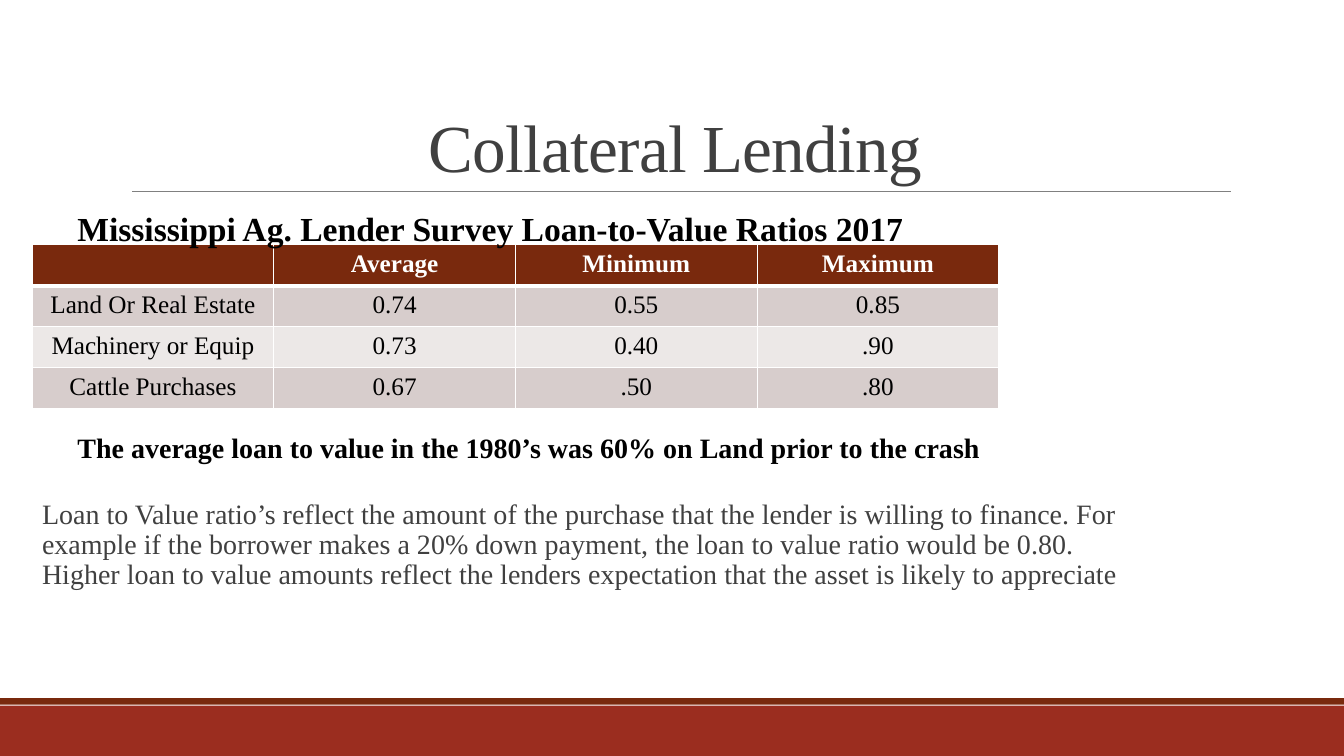
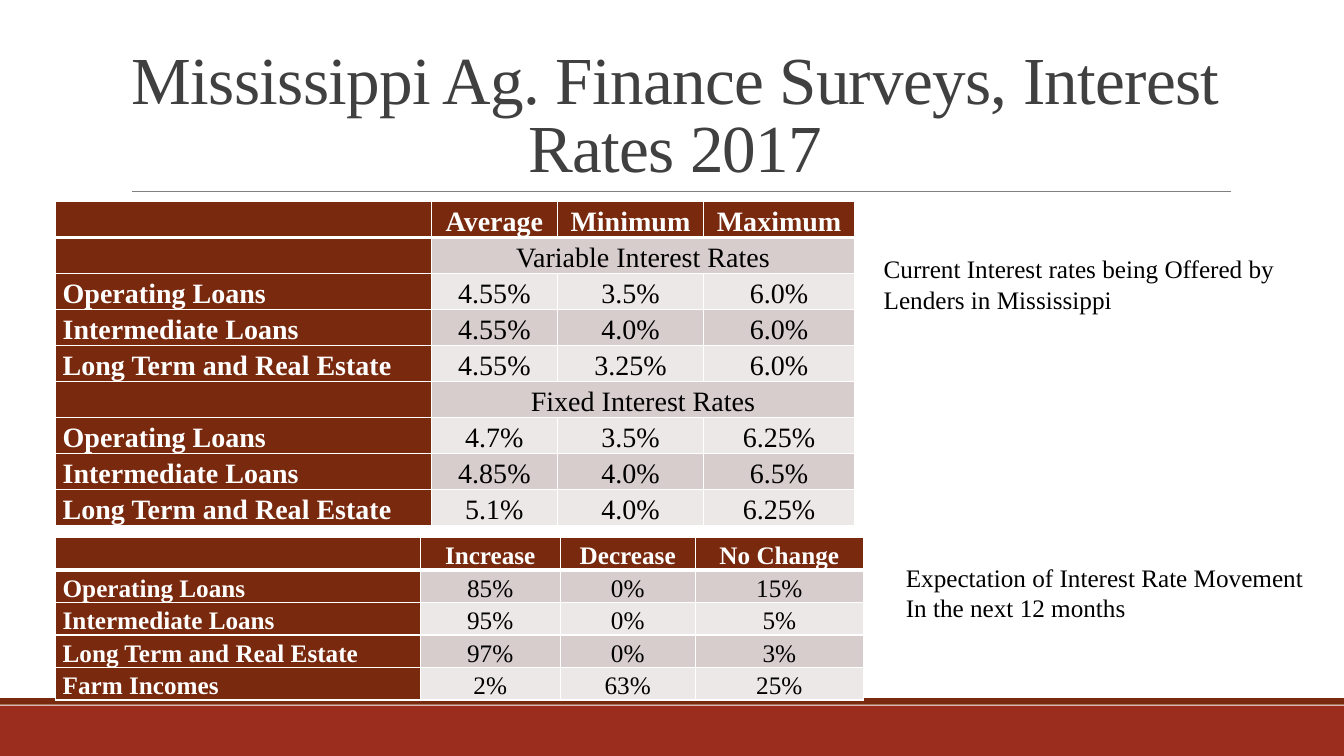
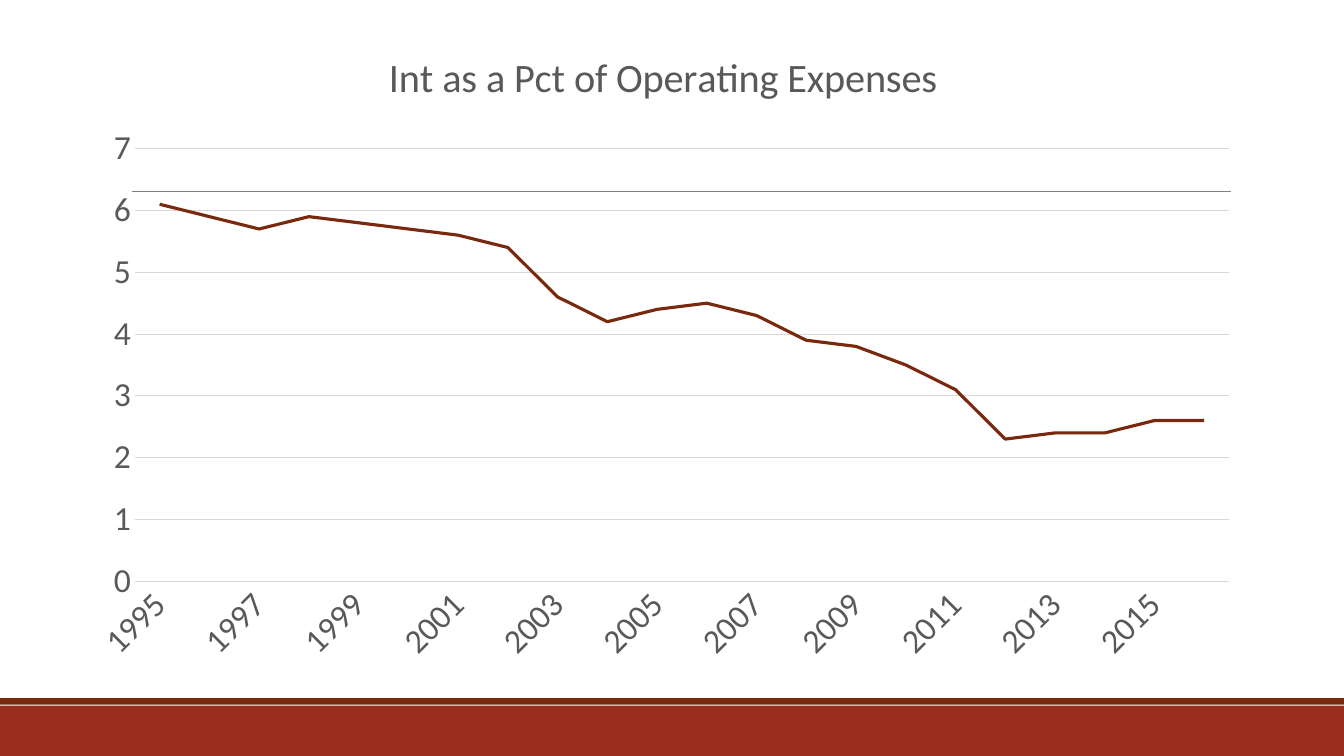
from lxml.etree import SubElement
from pptx import Presentation
from pptx.chart.data import CategoryChartData
from pptx.dml.color import RGBColor
from pptx.enum.chart import XL_CHART_TYPE as ChartType, XL_TICK_MARK as Tick
from pptx.enum.shapes import MSO_CONNECTOR as Connector, MSO_SHAPE as Shape
from pptx.enum.text import MSO_ANCHOR as Anchor, PP_ALIGN as Align
from pptx.oxml.ns import qn
from pptx.util import Cm, Pt

RED = RGBColor(0x9B, 0x2D, 0x1F)
BROWN = RGBColor(0x79, 0x29, 0x0D)
ROSE = RGBColor(0xD7, 0xCD, 0xCC)
PALE = RGBColor(0xEC, 0xE8, 0xE7)
WHITE = RGBColor(0xFF, 0xFF, 0xFF)
BLACK = RGBColor(0x00, 0x00, 0x00)
DARK = RGBColor(0x40, 0x40, 0x40)
GREY = RGBColor(0x80, 0x80, 0x80)
CHART_TEXT = RGBColor(0x59, 0x59, 0x59)
GRID_LINE = RGBColor(0xD9, 0xD9, 0xD9)
SERIF = "Times New Roman"
SANS = "Calibri"


def write(frame, lines, size, colour=BLACK, bold=False, align=Align.LEFT, spacing=None):
    for index, line in enumerate(lines):
        para = frame.add_paragraph() if index else frame.paragraphs[0]
        para.alignment = align
        para.line_spacing = spacing
        span = para.add_run()
        span.text = line
        span.font.name = SERIF
        span.font.size = Pt(size)
        span.font.bold = bold
        span.font.color.rgb = colour


def add_grid(page, left, top, widths, row_height, rows, size, compact):
    frame = page.shapes.add_table(
        len(rows), len(widths), Cm(left), Cm(top), Cm(sum(widths)), Cm(row_height * len(rows)))
    table = frame.table
    for column, width in zip(table.columns, widths):
        column.width = Cm(width)
    for y, texts in enumerate(rows):
        table.rows[y].height = Cm(row_height)
        for x in range(len(widths)):
            cell = table.cell(y, x)
            label = compact and x == 0
            header = y == 0 or label
            cell.fill.solid()
            cell.fill.fore_color.rgb = BROWN if header else ROSE if y % 2 else PALE
            if compact:
                cell.margin_left = cell.margin_right = Cm(0.18)
                cell.margin_top = cell.margin_bottom = 0
                cell.vertical_anchor = Anchor.BOTTOM
            properties = cell._tc.get_or_add_tcPr()
            for index, side in enumerate(("lnL", "lnR", "lnT", "lnB")):
                heavy = (y, side) in ((0, "lnB"), (1, "lnT"))
                border = SubElement(properties, qn(f"a:{side}"), w=str(Pt(3 if heavy else 1)))
                fill = SubElement(border, qn("a:solidFill"))
                SubElement(fill, qn("a:srgbClr"), val=str(WHITE))
                properties.insert(index, border)
            if x < len(texts) and texts[x]:
                write(cell.text_frame, [texts[x]], size, WHITE if header else BLACK, header,
                      Align.LEFT if label else Align.CENTER, 1.07 if compact else None)
        if len(texts) < len(widths):
            table.cell(y, 1).merge(table.cell(y, len(widths) - 1))


deck = Presentation()
deck.slide_width = Cm(33.87)
deck.slide_height = Cm(19.05)
pages = []

for heading in ("Collateral Lending", "Mississippi Ag. Finance Surveys, Interest Rates 2017", None):
    page = deck.slides.add_slide(deck.slide_layouts[6])
    pages.append(page)
    for top, height, colour in ((17.78, 1.27, RED), (17.59, 0.17, BROWN)):
        band = page.shapes.add_shape(Shape.RECTANGLE, 0, Cm(top), deck.slide_width, Cm(height))
        band.shadow.inherit = False
        band.fill.solid()
        band.fill.fore_color.rgb = colour
        band.line.fill.background()
    rule = page.shapes.add_connector(Connector.STRAIGHT, Cm(3.33), Cm(4.82), Cm(31.01), Cm(4.82))
    rule.line.color.rgb = GREY
    rule.line.width = Pt(0.5)
    SubElement(rule._element.spPr, qn("a:effectLst"))
    if heading:
        title = page.shapes.add_textbox(Cm(3.05), Cm(0.79), Cm(27.94), Cm(4.04)).text_frame
        title.word_wrap = True
        title.vertical_anchor = Anchor.BOTTOM
        write(title, [heading], 48, DARK, align=Align.CENTER, spacing=0.85)
        title.paragraphs[0].runs[0].font._element.set("spc", "-50")

lending, rates, expenses = pages

add_grid(lending, 0.81, 6.17, [6.09] * 4, 1.03, [
    ("", "Average", "Minimum", "Maximum"),
    ("Land Or Real Estate", "0.74", "0.55", "0.85"),
    ("Machinery or Equip", "0.73", "0.40", ".90"),
    ("Cattle Purchases", "0.67", ".50", ".80"),
], 18, False)

add_grid(rates, 1.4, 5.08, [9.47, 3.18, 3.68, 3.81], 0.84, [
    ("", "Average", "Minimum", "Maximum"),
    ("", "Variable Interest Rates"),
    ("Operating Loans", "4.55%", "3.5%", "6.0%"),
    ("Intermediate Loans", "4.55%", "4.0%", "6.0%"),
    ("Long Term and Real Estate", "4.55%", "3.25%", "6.0%"),
    ("", "Fixed Interest Rates"),
    ("Operating Loans", "4.7%", "3.5%", "6.25%"),
    ("Intermediate Loans", "4.85%", "4.0%", "6.5%"),
    ("Long Term and Real Estate", "5.1%", "4.0%", "6.25%"),
], 20, True)

add_grid(rates, 1.4, 13.54, [9.19, 3.53, 3.4, 4.24], 0.82, [
    ("", "Increase", "Decrease", "No Change"),
    ("Operating Loans", "85%", "0%", "15%"),
    ("Intermediate Loans", "95%", "0%", "5%"),
    ("Long Term and Real Estate", "97%", "0%", "3%"),
    ("Farm Incomes", "2%", "63%", "25%"),
], 18, True)

for page, left, top, width, height, size, bold, lines in (
    (lending, 1.7, 5.11, 21.54, 1.27, 24, True,
     ["Mississippi Ag. Lender Survey Loan-to-Value Ratios 2017"]),
    (lending, 1.7, 10.72, 23.44, 1.11, 20, True,
     ["The average loan to value in the 1980’s was 60% on Land prior to the crash"]),
    (rates, 22.02, 6.27, 10.74, 1.8, 18, False,
     ["Current Interest rates being Offered by", "Lenders in Mississippi"]),
    (rates, 22.58, 14.05, 10.74, 1.8, 18, False,
     ["Expectation of Interest Rate Movement", "In the next 12 months"]),
):
    note = page.shapes.add_textbox(Cm(left), Cm(top), Cm(width), Cm(height)).text_frame
    note.word_wrap = False
    write(note, lines, size, bold=bold)

body = lending.shapes.add_textbox(Cm(0.81), Cm(12.47), Cm(27.94), Cm(2.64)).text_frame
body.word_wrap = True
body.margin_left = Cm(0.25)
body.margin_right = 0
write(body, [
    "Loan to Value ratio’s reflect the amount of the purchase that the lender is willing to finance. "
    "For example if the borrower makes a 20% down payment, the loan to value ratio would be 0.80. "
    "Higher loan to value amounts reflect the lenders expectation that the asset is likely to appreciate"
], 20, DARK, spacing=0.9)

chart_name = "Int as a Pct of Operating Expenses"
data = CategoryChartData()
data.categories = [str(year) for year in range(1995, 2017)]
data.add_series(chart_name, (
    6.1, 5.9, 5.7, 5.9, 5.8, 5.7, 5.6, 5.4, 4.6, 4.2, 4.4,
    4.5, 4.3, 3.9, 3.8, 3.5, 3.1, 2.3, 2.4, 2.4, 2.6, 2.6))
chart = expenses.shapes.add_chart(
    ChartType.LINE, Cm(1.85), Cm(0.61), Cm(29.72), Cm(16.41), data).chart
chart.has_legend = False
chart.font.name = SANS
chart.font.size = Pt(24)
chart.font.color.rgb = CHART_TEXT
background = SubElement(chart._chartSpace, qn("c:spPr"))
SubElement(background, qn("a:noFill"))
SubElement(SubElement(background, qn("a:ln")), qn("a:noFill"))
chart._chartSpace.find(qn("c:txPr")).addprevious(background)

chart.has_title = True
chart.chart_title.include_in_layout = False
span = chart.chart_title.text_frame.paragraphs[0].add_run()
span.text = chart_name
span.font.name = SANS
span.font.size = Pt(28.8)
span.font.bold = False
span.font.color.rgb = CHART_TEXT

years, percents = chart.category_axis, chart.value_axis
for axis in (years, percents):
    axis.major_tick_mark = axis.minor_tick_mark = Tick.NONE
    axis.tick_labels.font.name = SANS
    axis.tick_labels.font.size = Pt(24)
    axis.tick_labels.font.color.rgb = CHART_TEXT
years._element.find(qn("c:txPr")).find(qn("a:bodyPr")).set("rot", "-2700000")
percents.minimum_scale, percents.maximum_scale, percents.major_unit = 0, 7, 1
percents.tick_labels.number_format = "General"
percents.tick_labels.number_format_is_linked = False
percents.format.line.fill.background()
for line in (years.format.line, percents.major_gridlines.format.line):
    line.color.rgb = GRID_LINE
    line.width = Pt(0.75)

series = chart.plots[0].series[0]
series.smooth = False
series.format.line.color.rgb = BROWN
series.format.line.width = Pt(2.25)
chart.plots[0].vary_by_categories = False

deck.save("out.pptx")
